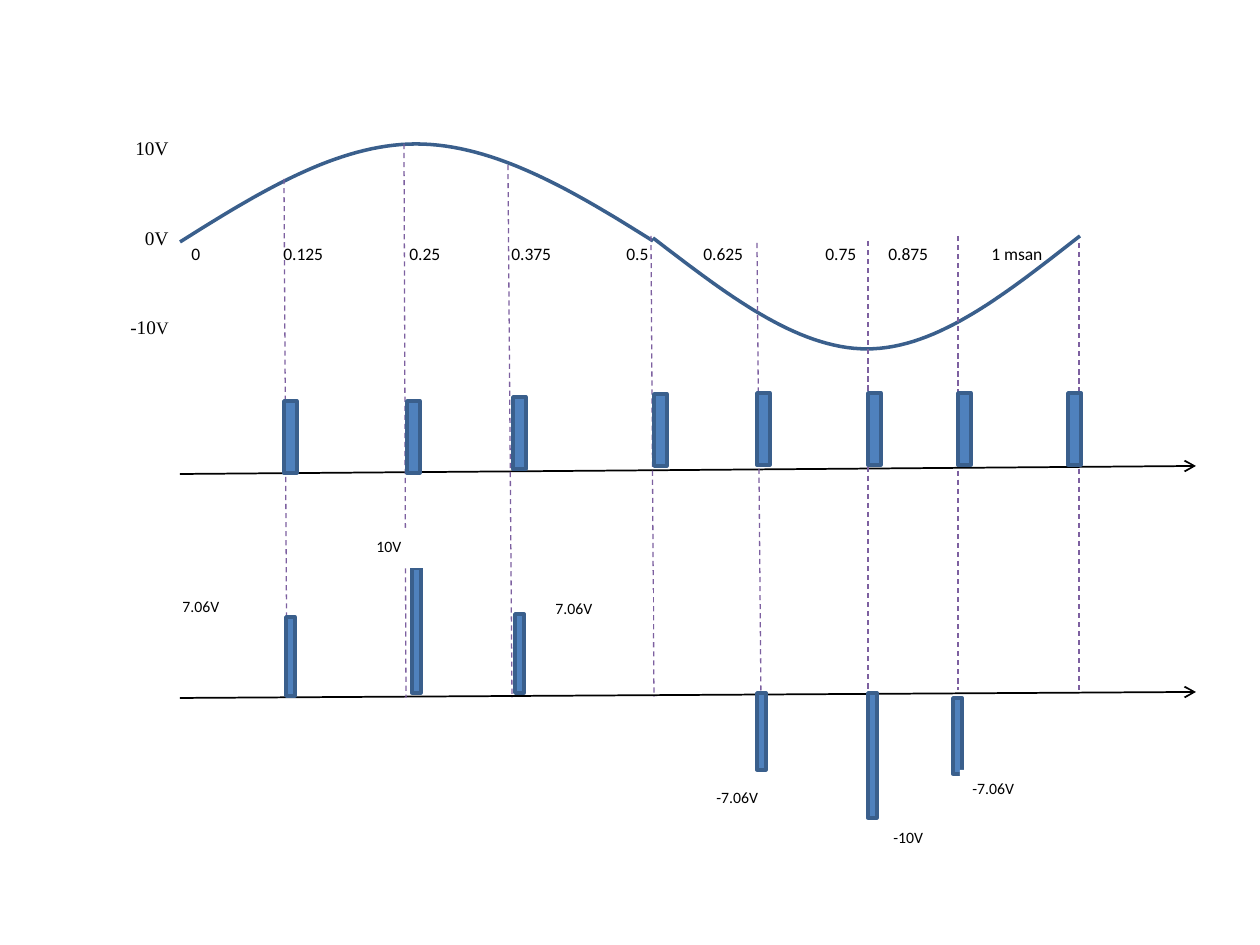
from lxml.etree import SubElement
from pptx import Presentation
from pptx.dml.color import RGBColor
from pptx.enum.dml import MSO_LINE
from pptx.enum.shapes import MSO_CONNECTOR, MSO_SHAPE
from pptx.enum.text import PP_ALIGN
from pptx.oxml.ns import qn
from pptx.util import Pt

PX_PER_INCH = 126
SCALE = 914400 / PX_PER_INCH
BLUE, DARK_BLUE, PURPLE, BLACK, WHITE = "4F81BD", "3A5F8C", "7D60A0", "000000", "FFFFFF"

# Start, two control points and end of each quarter of the wave.
POSITIVE_HALF = [
    [(180, 242), (258, 193), (337, 144), (416, 144)],
    [(416, 144), (495, 144), (575, 192), (653, 241)],
]
NEGATIVE_HALF = [
    [(653, 238), (725, 293), (796, 349), (867, 349)],
    [(867, 349), (938, 349), (1008, 292), (1080, 236)],
]
TIME_AXES = [(180, 474, 1196, 466), (180, 698, 1196, 692)]
SAMPLE_LINES = [
    (284, 179, 287, 697), (404, 144, 406, 698), (508, 165, 512, 698),
    (651, 236, 654, 697), (757, 243, 761, 698), (868, 241, 868, 697),
    (958, 236, 958, 690), (1079, 243, 1079, 690),
]
PULSE_SIZE = (13, 72)
PULSES = [(284, 401), (407, 401), (513, 397), (654, 394),
          (757, 393), (868, 393), (958, 393), (1068, 393)]
LEVEL_WIDTH = 9
LEVELS = [(286, 617, 79), (412, 568, 125), (515, 614, 79),
          (757, 693, 77), (868, 693, 125), (953, 698, 76)]
LEVEL_LABELS = [("7.06V", 170, 588, 110), ("10V", 364, 528, 110),
                ("7.06V", 543, 590, 110), ("-7.06V", 704, 779, 110),
                ("-10V", 881, 819, 88), ("-7.06V", 960, 770, 110)]
TIMES = ["0", "0.125", "0.25", "0.375", "0.5", "0.625", "0.75", "0.875", "1 msan"]
TIME_TABS = [92, 218, 320, 435, 512, 634, 697, 800]


def px(n):
    return round(n * SCALE)


def rgb(value):
    return RGBColor.from_string(value)


def set_line(s, color, width):
    s.line.color.rgb = rgb(color)
    s.line.width = Pt(width)


def add_line(slide, ends, color, width):
    s = slide.shapes.add_connector(MSO_CONNECTOR.STRAIGHT, *map(px, ends))
    set_line(s, color, width)
    SubElement(s._element.spPr, qn("a:effectLst"))
    return s


def add_axis(slide, ends):
    s = add_line(slide, ends, BLACK, 1)
    SubElement(s._element.spPr.find(qn("a:ln")), qn("a:tailEnd"), type="arrow")


def add_bar(slide, *box):
    s = slide.shapes.add_shape(MSO_SHAPE.RECTANGLE, *map(px, box))
    s.shadow.inherit = False
    s.fill.solid()
    s.fill.fore_color.rgb = rgb(BLUE)
    set_line(s, DARK_BLUE, 2)


def curve_points(segments, steps=32):
    """Points along joined cubic Bézier segments, in EMU."""
    for segment in segments:
        for i in range(steps + 1):
            t = i / steps
            weights = ((1 - t) ** 3, 3 * t * (1 - t) ** 2, 3 * t * t * (1 - t), t ** 3)
            yield tuple(px(sum(w * v for w, v in zip(weights, axis)))
                        for axis in zip(*segment))


def add_curve(slide, segments):
    start, *rest = curve_points(segments)
    builder = slide.shapes.build_freeform(*start)
    builder.add_line_segments(rest, close=False)
    s = builder.convert_to_shape()
    s.shadow.inherit = False
    s.fill.background()
    set_line(s, DARK_BLUE, 2)


def add_text_box(slide, box, fill=None):
    s = slide.shapes.add_textbox(*map(px, box))
    s.text_frame.word_wrap = True
    if fill:
        s.fill.solid()
        s.fill.fore_color.rgb = rgb(fill)
    return s.text_frame


def format_paragraph(p, align=PP_ALIGN.LEFT, after=10):
    p.alignment = align
    p.line_spacing = 1.15
    p.space_after = Pt(after)


def add_run(p, text, size, font="Calibri"):
    r = p.add_run()
    r.text = text
    r.font.size = Pt(size)
    r.font.name = font
    r.font.color.rgb = rgb(BLACK)


def add_voltage_scale(slide):
    tf = add_text_box(slide, (94, 127, 87, 266), WHITE)
    rows = [[("10V", 11)], [("0V", 11)], [("-10", 11), ("V", 10)]]
    for i, runs in enumerate(rows):
        p = tf.add_paragraph() if i else tf.paragraphs[0]
        format_paragraph(p, PP_ALIGN.RIGHT, 36)
        for text, size in runs:
            add_run(p, text, size, "Times New Roman")


def add_level_label(slide, text, x, y, width):
    p = add_text_box(slide, (x, y, width, 40), WHITE).paragraphs[0]
    format_paragraph(p)
    add_run(p, text, 9)


def add_time_labels(slide):
    p = add_text_box(slide, (179, 234, 895, 35)).paragraphs[0]
    format_paragraph(p)
    tabs = SubElement(p._p.get_or_add_pPr(), qn("a:tabLst"))
    for x in TIME_TABS:
        SubElement(tabs, qn("a:tab"), pos=str(px(x)), algn="l")
    add_run(p, "\t".join(TIMES), 10)


def main():
    prs = Presentation()
    prs.slide_width, prs.slide_height = px(1260), px(945)
    slide = prs.slides.add_slide(prs.slide_layouts[6])

    add_voltage_scale(slide)
    for half in (POSITIVE_HALF, NEGATIVE_HALF):
        add_curve(slide, half)
    for ends in TIME_AXES:
        add_axis(slide, ends)
    for ends in SAMPLE_LINES:
        add_line(slide, ends, PURPLE, 0.75).line.dash_style = MSO_LINE.DASH
    for x, y in PULSES:
        add_bar(slide, x, y, *PULSE_SIZE)
    for x, y, height in LEVELS:
        add_bar(slide, x, y, LEVEL_WIDTH, height)
    for label in LEVEL_LABELS:
        add_level_label(slide, *label)
    add_time_labels(slide)

    prs.save("out.pptx")


if __name__ == "__main__":
    main()
